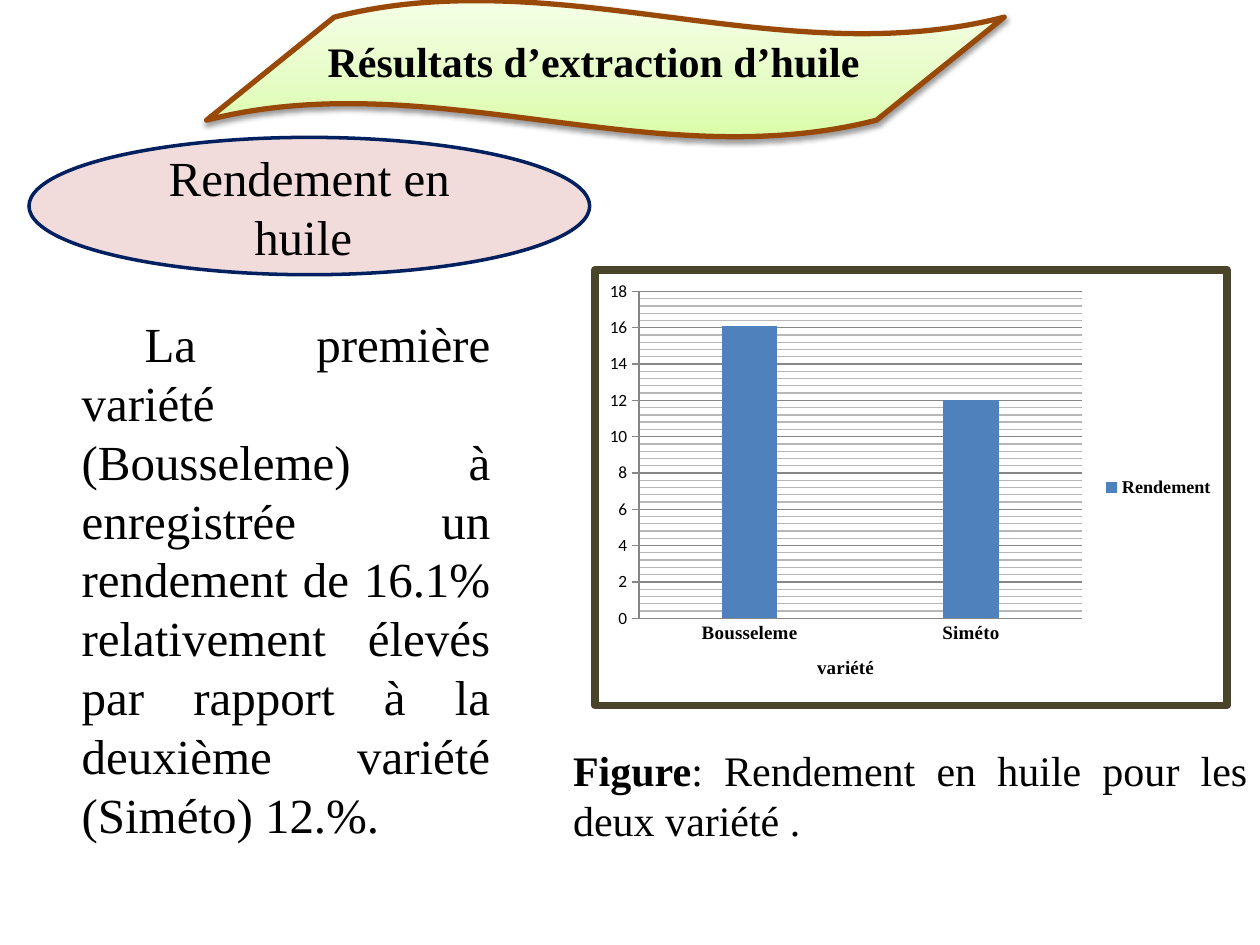
import copy
from dataclasses import dataclass

import lxml.etree
import pptx
import pptx.chart.data
import pptx.dml.color
import pptx.enum.chart
import pptx.enum.shapes
import pptx.enum.text
import pptx.oxml
import pptx.oxml.ns
import pptx.util

Inches, Pt = pptx.util.Inches, pptx.util.Pt
ALIGN = pptx.enum.text.PP_ALIGN
ANCHOR = pptx.enum.text.MSO_ANCHOR
SHAPE = pptx.enum.shapes.MSO_SHAPE
CHART = pptx.enum.chart
qn = pptx.oxml.ns.qn


@dataclass(frozen=True)
class Theme:
    serif: str = "Times New Roman"
    sans: str = "Calibri"
    text: str = "000000"
    white: str = "FFFFFF"
    banner_line: str = "984807"
    banner_stops: tuple = ((0, "DAFDA7"), (0.35, "E4FCC2"), (1, "F5FFE7"))
    oval_fill: str = "F2DCDB"
    oval_line: str = "002060"
    bar: str = "4F81BD"
    chart_border: str = "4A452A"
    axis: str = "868686"
    minor_grid: str = "B7B7B7"
    heading_size: float = 24
    body_size: float = 28
    tick_size: float = 10
    label_size: float = 11
    legend_size: float = 10.5


def rgb(value):
    return pptx.dml.color.RGBColor.from_string(value)


def set_font(font, name, size, color, bold=False):
    font.name, font.size, font.bold = name, Pt(size), bold
    font.color.rgb = rgb(color)


def set_line(line, color, width):
    line.color.rgb = rgb(color)
    line.width = Pt(width)


def chart_properties(line_color, width, fill=""):
    """Return a c:spPr element for chart parts without a public format."""
    def solid(color):
        return f'<a:solidFill><a:srgbClr val="{color}"/></a:solidFill>'

    return pptx.oxml.parse_xml(
        f'<c:spPr {pptx.oxml.ns.nsdecls("c", "a")}>{solid(fill) if fill else ""}'
        f'<a:ln w="{Pt(width)}">{solid(line_color)}<a:round/></a:ln></c:spPr>')


def write(frame, *parts, size, font, color, align=ALIGN.JUSTIFY, anchor=ANCHOR.TOP):
    """Fill a frame with one paragraph made of (text, bold) parts."""
    frame.word_wrap = True
    frame.vertical_anchor = anchor
    paragraph = frame.paragraphs[0]
    paragraph.alignment = align
    for text, bold in parts:
        run = paragraph.add_run()
        run.text = text
        set_font(run.font, font, size, color, bold)


class SlideBuilder:
    def __init__(self, presentation, theme):
        self.theme = theme
        self.slide = presentation.slides.add_slide(presentation.slide_layouts[5])

    def shape(self, kind, box, line, width):
        shape = self.slide.shapes.add_shape(kind, *map(Inches, box))
        shape.shadow.inherit = False
        set_line(shape.line, line, width)
        return shape

    def banner(self, box):
        theme = self.theme
        wave = self.shape(SHAPE.WAVE, box, theme.banner_line, 3)
        wave.adjustments[0], wave.adjustments[1] = 0.125, -0.08
        wave.fill.gradient()
        wave.fill.gradient_angle = 90
        stops = wave.element.spPr.find(".//" + qn("a:gsLst"))
        stops.append(copy.deepcopy(stops[0]))
        for stop, (position, color) in zip(wave.fill.gradient_stops, theme.banner_stops):
            stop.position = position
            stop.color.rgb = rgb(color)
        effects = wave.element.spPr.find(qn("a:effectLst"))
        shadow = lxml.etree.SubElement(
            effects, qn("a:outerShdw"), blurRad=str(Pt(3.1)), dist=str(Pt(1.6)),
            dir="5400000", rotWithShape="0")
        color = lxml.etree.SubElement(shadow, qn("a:srgbClr"), val=theme.text)
        lxml.etree.SubElement(color, qn("a:alpha"), val="38000")

    def title(self, text, box):
        title = self.slide.shapes.title
        title.left, title.top, title.width, title.height = map(Inches, box)
        title.element.getparent().append(title.element)  # bring above the banner
        write(title.text_frame, (text, True), size=self.theme.heading_size,
              font=self.theme.serif, color=self.theme.text, anchor=ANCHOR.MIDDLE)

    def oval(self, text, box):
        theme = self.theme
        oval = self.shape(SHAPE.OVAL, box, theme.oval_line, 2)
        oval.fill.solid()
        oval.fill.fore_color.rgb = rgb(theme.oval_fill)
        write(oval.text_frame, (text, False), size=theme.body_size, font=theme.serif,
              color=theme.text, align=ALIGN.CENTER, anchor=ANCHOR.MIDDLE)

    def text(self, box, *parts, size, anchor=ANCHOR.TOP):
        frame = self.slide.shapes.add_textbox(*map(Inches, box)).text_frame
        write(frame, *parts, size=size, font=self.theme.serif,
              color=self.theme.text, anchor=anchor)

    def column_chart(self, box, series_name, values, axis_title):
        theme = self.theme
        data = pptx.chart.data.CategoryChartData()
        data.categories = list(values)
        data.add_series(series_name, list(values.values()))
        chart = self.slide.shapes.add_chart(
            CHART.XL_CHART_TYPE.COLUMN_CLUSTERED, *map(Inches, box), data).chart
        set_font(chart.font, theme.sans, theme.tick_size, theme.text)
        chart.has_title = False
        chart.element.find(qn("c:chart")).addnext(
            chart_properties(theme.chart_border, 4.5, theme.white))

        plot = chart.plots[0]
        plot.gap_width = 300
        plot.vary_by_categories = False
        bars = plot.series[0].format.fill
        bars.solid()
        bars.fore_color.rgb = rgb(theme.bar)

        chart.has_legend = True
        chart.legend.position = CHART.XL_LEGEND_POSITION.RIGHT
        chart.legend.include_in_layout = False
        set_font(chart.legend.font, theme.serif, theme.legend_size, theme.text, True)

        category = chart.category_axis
        category.major_tick_mark = CHART.XL_TICK_MARK.NONE
        set_font(category.tick_labels.font, theme.serif, theme.label_size, theme.text, True)
        write(category.axis_title.text_frame, (axis_title, True), size=theme.label_size,
              font=theme.serif, color=theme.text, align=ALIGN.CENTER)

        value = chart.value_axis
        value.minimum_scale, value.maximum_scale = 0, 18
        value.major_unit, value.minor_unit = 2, 0.4
        value.major_tick_mark = CHART.XL_TICK_MARK.CROSS
        value.has_major_gridlines = value.has_minor_gridlines = True
        set_line(value.major_gridlines.format.line, theme.axis, 0.75)
        chart.element.find(".//" + qn("c:minorGridlines")).append(
            chart_properties(theme.minor_grid, 0.75))
        for axis in (category, value):
            set_line(axis.format.line, theme.axis, 0.75)
        self.place_plot(chart, x=0.07, y=0.05, w=0.7, h=0.75)

    def place_plot(self, chart, **fractions):
        """Fix the inner plot area as fractions of the chart."""
        area = chart.element.find(".//" + qn("c:plotArea"))
        old = area.find(qn("c:layout"))
        if old is not None:
            area.remove(old)
        layout = lxml.etree.Element(qn("c:layout"))
        manual = lxml.etree.SubElement(layout, qn("c:manualLayout"))
        settings = {"layoutTarget": "inner", "xMode": "edge", "yMode": "edge", **fractions}
        for name, setting in settings.items():
            lxml.etree.SubElement(manual, qn("c:" + name), val=str(setting))
        area.insert(0, layout)


def main():
    presentation = pptx.Presentation()
    presentation.slide_width, presentation.slide_height = Inches(10), Inches(7.5)
    theme = Theme()
    builder = SlideBuilder(presentation, theme)
    builder.banner((1.64, 0, 6.33, 1.09))
    builder.title("Résultats d’extraction d’huile ", (2.5, 0.23, 4.77, 0.5))
    builder.oval("Rendement en huile ", (0.23, 1.09, 4.45, 1.09))
    builder.column_chart((4.69, 2.11, 5.08, 3.52), "Rendement",
                         {"Bousseleme": 16.1, "Siméto": 12}, "variété")
    builder.text((4.45, 5.86, 5.55, 0.91), ("Figure", True),
                 (": Rendement en huile pour les deux variété .", False),
                 size=theme.heading_size)
    builder.text((0.55, 2.42, 3.44, 4.34),
                 ("\tLa première variété (Bousseleme) à enregistrée un rendement de 16.1% "
                  "relativement élevés par rapport à la deuxième variété (Siméto) 12.%.", False),
                 size=theme.body_size, anchor=ANCHOR.MIDDLE)
    presentation.save("out.pptx")


if __name__ == "__main__":
    main()
